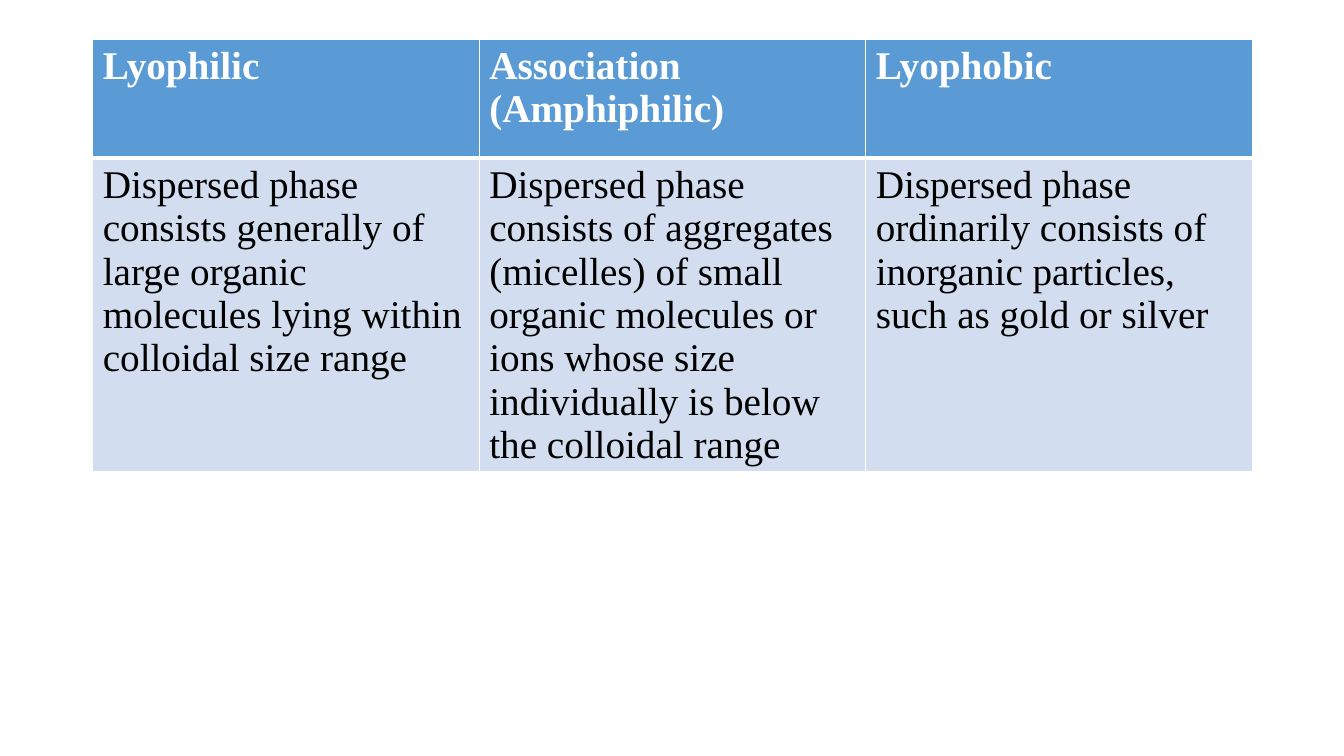
import pptx
import pptx.dml.color
import pptx.oxml
import pptx.oxml.ns
import pptx.util
from pptx.util import Inches

WHITE = pptx.dml.color.RGBColor(0xFF, 0xFF, 0xFF)
BLACK = pptx.dml.color.RGBColor(0x00, 0x00, 0x00)
HEADER_BLUE = pptx.dml.color.RGBColor(0x5B, 0x9B, 0xD5)
BODY_BLUE = pptx.dml.color.RGBColor(0xD2, 0xDE, 0xEF)

FONT = "Times New Roman"
ROW_HEIGHTS = (1.18, 2.7)
COLLOIDS = [
    ("Lyophilic", "Association (Amphiphilic)", "Lyophobic"),
    (
        "Dispersed phase consists generally of large organic molecules "
        "lying within colloidal size range",
        "Dispersed phase consists of aggregates (micelles) of small organic "
        "molecules or ions whose size individually is below the colloidal range",
        "Dispersed phase ordinarily consists of inorganic particles, "
        "such as gold or silver",
    ),
]


def set_borders(cell, color, **widths):
    """Add cell borders; widths are points keyed by side, in L, R, T, B order."""
    tcPr = cell._tc.get_or_add_tcPr()
    for side, width in widths.items():
        tcPr.append(pptx.oxml.parse_xml(
            f'<a:ln{side} {pptx.oxml.ns.nsdecls("a")} w="{pptx.util.Pt(width)}">'
            f'<a:solidFill><a:srgbClr val="{color}"/></a:solidFill></a:ln{side}>'
        ))


def fill_cell(cell, text, header):
    # Borders: a thick rule separates header and body
    set_borders(cell, WHITE, L=1, R=1, T=1 if header else 3, B=3 if header else 1)
    cell.fill.solid()
    cell.fill.fore_color.rgb = HEADER_BLUE if header else BODY_BLUE

    # Text
    r = cell.text_frame.paragraphs[0].add_run()
    r.text = text
    r.font.name = FONT
    r.font.size = pptx.util.Pt(28)
    r.font.bold = header
    r.font.color.rgb = WHITE if header else BLACK


def add_colloid_table(slide, left, top, width):
    rows, cols = len(COLLOIDS), len(COLLOIDS[0])
    table = slide.shapes.add_table(
        rows, cols, Inches(left), Inches(top), Inches(width), Inches(sum(ROW_HEIGHTS))
    ).table
    for column in table.columns:
        column.width = Inches(width / cols)
    for i, (height, texts) in enumerate(zip(ROW_HEIGHTS, COLLOIDS)):
        table.rows[i].height = Inches(height)
        for j, text in enumerate(texts):
            fill_cell(table.cell(i, j), text, header=i == 0)


def main():
    prs = pptx.Presentation()
    prs.slide_width = Inches(13.33)
    prs.slide_height = Inches(7.5)
    slide = prs.slides.add_slide(prs.slide_layouts[6])

    # Comparison of colloid types
    add_colloid_table(slide, 0.92, 0.39, 11.5)
    prs.save("out.pptx")


if __name__ == "__main__":
    main()
